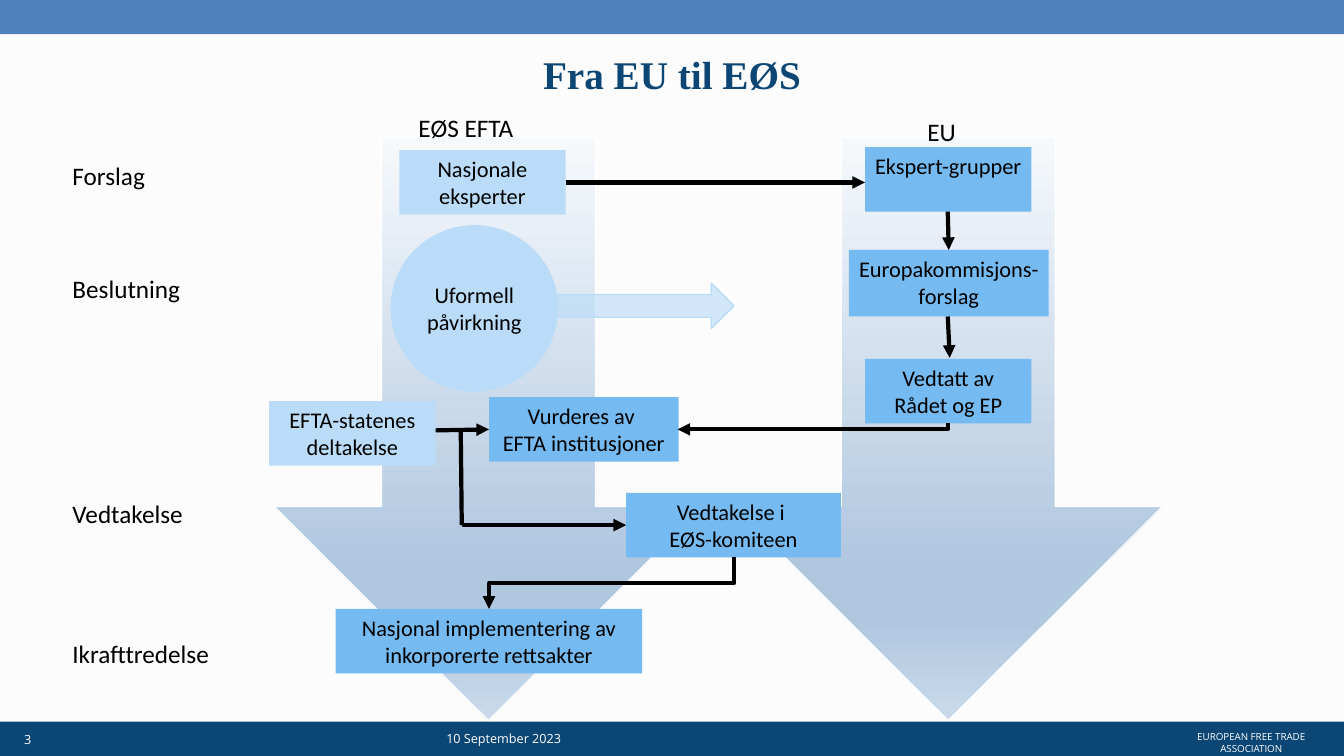
from lxml import etree
from pptx import Presentation
from pptx.dml.color import RGBColor
from pptx.enum.shapes import MSO_CONNECTOR as CONN, MSO_SHAPE as SHAPE
from pptx.enum.text import MSO_ANCHOR as ANCHOR, PP_ALIGN as ALIGN
from pptx.oxml import parse_xml
from pptx.oxml.ns import nsdecls, qn
from pptx.util import Inches, Pt

COLORS = {
    "back": "FCFCFC", "navy": "0C4674", "bar": "4F82BA", "white": "FFFFFF",
    "black": "000000", "light": "BADCF8", "mid": "75BAF1",
}
GRADIENT = [(0, "F6F9FC"), (74, "B0C7E0"), (83, "B0C7E0"), (100, "CADAEA")]


class Diagram:
    """Draws the elements of a flow diagram in one style on one slide."""

    def __init__(self, prs):
        self.s = prs.slides.add_slide(prs.slide_layouts[5])
        fill = self.s.background.fill
        fill.solid()
        fill.fore_color.rgb = self.rgb("back")

    def rgb(self, name):
        return RGBColor.from_string(COLORS[name])

    def set_text(self, shape, text, size, color="black", font="Calibri",
                 align=ALIGN.LEFT, anchor=ANCHOR.TOP, wrap=True, bold=False):
        tf = shape.text_frame
        tf.text = text
        tf.word_wrap = wrap
        tf.vertical_anchor = anchor
        for p in tf.paragraphs:
            p.alignment = align
            p.font.size = Pt(size)
            p.font.name = font
            p.font.bold = bold
            p.font.color.rgb = self.rgb(color)
        return tf

    def title(self, text, *box):
        sp = self.s.shapes.title
        sp.left, sp.top, sp.width, sp.height = map(Inches, box)
        tf = self.set_text(sp, text, 28, "navy", "Times New Roman", ALIGN.CENTER, bold=True)
        tf.paragraphs[0].line_spacing = 0.9

    def text(self, text, x, y, w, h=0.4, size=18, **style):
        sp = self.s.shapes.add_textbox(*map(Inches, (x, y, w, h)))
        self.set_text(sp, text, size, **style)

    def footer(self, text, x, y, w, size=9, **style):
        self.text(text, x, y, w, 0.34, size, color="white", font="Open Sans", **style)

    def shape(self, kind, x, y, w, h, fill, line=None, text=None, anchor=ANCHOR.TOP):
        sp = self.s.shapes.add_shape(kind, *map(Inches, (x, y, w, h)))
        sp.shadow.inherit = False
        sp.fill.solid()
        sp.fill.fore_color.rgb = self.rgb(fill)
        if line:
            sp.line.color.rgb = self.rgb(line)
            sp.line.width = Pt(1)
        else:
            sp.line.fill.background()
        if text:
            self.set_text(sp, text, 16, align=ALIGN.CENTER, anchor=anchor)
        return sp

    def box(self, text, x, y, w=1.65, h=0.64, fill="mid"):
        self.shape(SHAPE.RECTANGLE, x, y, w, h, fill, text=text)

    def down_arrow(self, x, y, w, h):
        sp = self.shape(SHAPE.DOWN_ARROW, x, y, w, h, "white", "white")
        stops = "".join(
            f'<a:gs pos="{pos * 1000}"><a:srgbClr val="{color}"/></a:gs>'
            for pos, color in GRADIENT)
        grad = parse_xml(
            f'<a:gradFill {nsdecls("a")} rotWithShape="1"><a:gsLst>{stops}</a:gsLst>'
            '<a:lin ang="5400000" scaled="0"/></a:gradFill>')
        spPr = sp._element.spPr
        spPr.replace(spPr.find(qn("a:solidFill")), grad)

    def influence_arrow(self, x, y, w, h):
        sp = self.shape(SHAPE.RIGHT_ARROW, x, y, w, h, "light", "light")
        color = sp._element.spPr.find(qn("a:solidFill"))[0]
        etree.SubElement(color, qn("a:alpha")).set("val", "64000")

    def line(self, x1, y1, x2, y2, head=True, kind=CONN.STRAIGHT):
        c = self.s.shapes.add_connector(kind, *map(Inches, (x1, y1, x2, y2)))
        c.line.color.rgb = self.rgb("black")
        c.line.width = Pt(3)
        spPr = c._element.spPr
        if head:
            etree.SubElement(spPr.find(qn("a:ln")), qn("a:tailEnd")).set("type", "triangle")
        etree.SubElement(spPr, qn("a:effectLst"))
        return c

    def bent(self, x1, y1, x2, y2, preset):
        cx, cy = (x1 + x2) / 2, (y1 + y2) / 2
        dx, dy = (x1 - x2) / 2, (y2 - y1) / 2
        c = self.line(cx - dy, cy - dx, cx + dy, cy + dx, kind=CONN.ELBOW)
        spPr = c._element.spPr
        spPr.find(qn("a:xfrm")).set("rot", "5400000")
        spPr.find(qn("a:prstGeom")).set("prst", preset)


def main():
    prs = Presentation()
    prs.slide_width, prs.slide_height = Inches(13.33), Inches(7.5)
    d = Diagram(prs)

    d.shape(SHAPE.RECTANGLE, 0, 7.16, 13.33, 0.34, "navy")
    d.shape(SHAPE.RECTANGLE, 0, 0, 13.33, 0.34, "bar")
    d.footer("EUROPEAN FREE TRADE ASSOCIATION", 11.49, 7.2, 1.84, 7,
             align=ALIGN.CENTER, wrap=False)
    d.footer("10 September 2023", 3.85, 7.16, 2.29, align=ALIGN.CENTER, anchor=ANCHOR.MIDDLE)
    d.footer("3", 0.14, 7.17, 1.21, anchor=ANCHOR.MIDDLE)
    d.title("Fra EU til EØS", 1.92, 0.5, 9.49, 0.74)

    for x in (2.72, 7.28):
        d.down_arrow(x, 1.36, 4.25, 5.79)
    for stage, y in (("Forslag", 1.54), ("Beslutning", 2.66),
                     ("Vedtakelse", 4.89), ("Ikrafttredelse", 6.28)):
        d.text(stage, 0.62, y, 2.01)

    d.box("Nasjonale eksperter", 3.96, 1.49, fill="light")
    d.box("Ekspert-grupper", 8.58, 1.46)
    d.box("Europakommisjons-forslag", 8.42, 2.48, 1.98, 0.66)
    d.box("Vedtatt av Rådet og EP", 8.58, 3.56)
    d.box("Vurderes av \nEFTA institusjoner", 4.85, 3.94, 1.88)
    d.box("Vedtakelse i \nEØS-komiteen", 6.21, 4.89, 2.13)
    d.box("Nasjonal implementering av inkorporerte rettsakter", 3.33, 6.04, 3.04)
    d.box("EFTA-statenes deltakelse", 2.67, 3.98, fill="light")
    d.shape(SHAPE.OVAL, 3.88, 2.24, 1.65, 1.64, "light", "light",
            "Uformell påvirkning", ANCHOR.MIDDLE)

    d.line(5.61, 1.81, 8.58, 1.81)
    d.line(9.4, 2.1, 9.41, 2.48)
    d.line(9.4, 3.14, 9.42, 3.55)
    d.influence_arrow(5.52, 2.81, 1.76, 0.45)
    d.bent(9.4, 4.2, 6.72, 4.26, "bentConnector2")
    d.line(4.32, 4.27, 4.85, 4.26)
    d.line(4.57, 4.27, 4.58, 5.21, head=False)
    d.line(4.58, 5.21, 6.21, 5.21)
    d.bent(7.28, 5.53, 4.85, 6.04, "bentConnector3")

    d.text("EØS EFTA", 4.05, 1.07, 1.15, wrap=False)
    d.text("EU", 9.1, 1.1, 0.49, wrap=False)
    prs.save("out.pptx")


if __name__ == "__main__":
    main()
